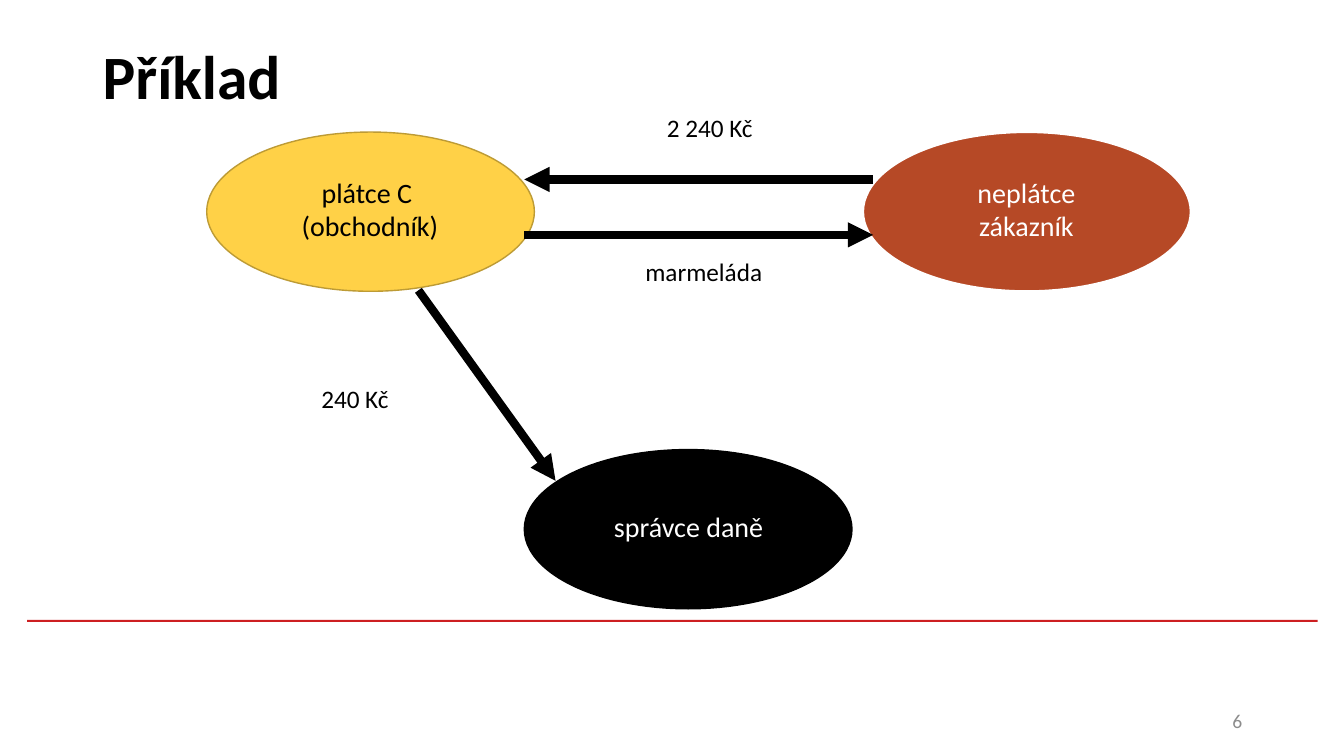
from dataclasses import dataclass

from lxml.etree import SubElement
from pptx import Presentation
from pptx.dml.color import RGBColor
from pptx.enum.shapes import MSO_CONNECTOR, MSO_SHAPE
from pptx.enum.text import MSO_ANCHOR, PP_ALIGN
from pptx.oxml.ns import qn
from pptx.util import Emu, Pt

SCALE = 9144  # EMU per px, 100 px to the inch


@dataclass(frozen=True)
class Theme:
    font: str = "Calibri"
    black: str = "000000"
    white: str = "FFFFFF"
    gray: str = "8C8C8C"
    red: str = "CD1F21"
    gold: str = "FFD147"
    bronze: str = "BD9B35"
    rust: str = "B64926"
    title: int = 44
    party: int = 20
    label: int = 18
    number: int = 14
    arrow: int = 6


def px(*sizes):
    return [Emu(size * SCALE) for size in sizes]


class Page:
    def __init__(self, slide, theme):
        self.shapes = slide.shapes
        self.theme = theme

    def shape(self, kind, box, fill, edge=None, width=1):
        shape = self.shapes.add_shape(kind, *px(*box))
        shape.shadow.inherit = False
        shape.fill.solid()
        shape.fill.fore_color.rgb = RGBColor.from_string(fill)
        if edge:
            shape.line.color.rgb = RGBColor.from_string(edge)
            shape.line.width = Pt(width)
        else:
            shape.line.fill.background()

    def arrow(self, start, end):
        line = self.shapes.add_connector(MSO_CONNECTOR.STRAIGHT, *px(*start, *end))
        line.line.color.rgb = RGBColor.from_string(self.theme.black)
        line.line.width = Pt(self.theme.arrow)
        SubElement(line.line._get_or_add_ln(), qn("a:tailEnd"), type="triangle")
        SubElement(line._element.spPr, qn("a:effectLst"))

    def text(self, words, box, size, color, align=PP_ALIGN.CENTER,
             anchor=MSO_ANCHOR.TOP, bold=False):
        frame = self.shapes.add_textbox(*px(*box)).text_frame
        frame.word_wrap = True
        frame.vertical_anchor = anchor
        para = frame.paragraphs[0]
        para.text = words
        para.alignment = align
        font = para.font
        font.name, font.size, font.bold = self.theme.font, Pt(size), bold
        font.color.rgb = RGBColor.from_string(color)


def main():
    deck = Presentation()
    deck.slide_width, deck.slide_height = px(1333, 750)
    theme = Theme()
    page = Page(deck.slides.add_slide(deck.slide_layouts[6]), theme)

    # Footer rule, title and page number
    page.shape(MSO_SHAPE.RECTANGLE, (27, 615, 1280, 2), theme.red)
    page.text("Příklad", (92, 2, 1150, 145), theme.title, theme.black,
              PP_ALIGN.LEFT, MSO_ANCHOR.MIDDLE, True)
    page.text("6", (942, 695, 300, 40), theme.number, theme.gray,
              PP_ALIGN.RIGHT, MSO_ANCHOR.MIDDLE)

    # Parties
    for left, top, fill, edge, width in (
        (205, 131, theme.gold, theme.bronze, 1),
        (520, 446, theme.black, theme.black, 1),
        (856, 131, theme.rust, theme.white, 1.5),
    ):
        page.shape(MSO_SHAPE.OVAL, (left, top, 325, 158), fill, edge, width)

    # Flows of goods, payment and tax
    for start, end in (
        ((520, 233), (866, 233)),
        ((866, 178), (520, 178)),
        ((415, 288), (551, 477)),
    ):
        page.arrow(start, end)

    # Party names
    for words, box, color in (
        ("neplátce\vzákazník", (887, 169, 262, 77), theme.white),
        ("správce daně", (583, 501, 200, 44), theme.white),
        ("plátce C \v(obchodník)", (236, 169, 262, 77), theme.black),
    ):
        page.text(words, box, theme.party, color)

    # Flow labels
    for words, box in (
        ("2 240 Kč", (562, 107, 284, 40)),
        ("marmeláda", (572, 249, 252, 40)),
        ("240 Kč", (226, 375, 252, 40)),
    ):
        page.text(words, box, theme.label, theme.black)

    deck.save("out.pptx")


if __name__ == "__main__":
    main()
